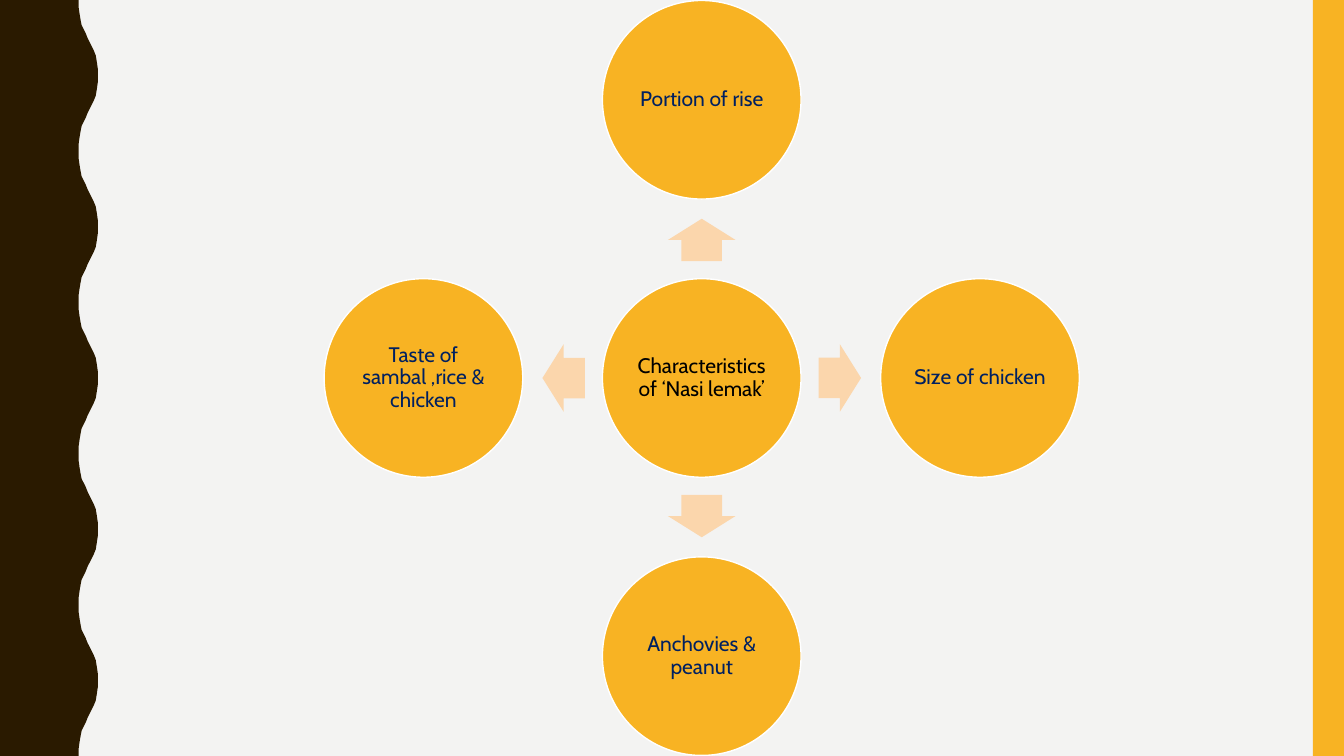
"""Build a radial diagram slide of the characteristics of nasi lemak."""
from pptx import Presentation
from pptx.dml.color import RGBColor
from pptx.enum.shapes import MSO_SHAPE
from pptx.enum.text import MSO_ANCHOR, PP_ALIGN
from pptx.util import Inches, Pt

HUB_TEXT = "Characteristics of ‘Nasi lemak’"
BRANCHES = [
    ("Portion of rise", 0, -1, 270),
    ("Size of chicken", 1, 0, 0),
    ("Anchovies & peanut", 0, 1, 90),
    ("Taste of sambal ,rice & chicken", -1, 0, 180),
]
HALF_WAVE = [
    (0.78, 0), (0.78, 0.07), (0.79, 0.14), (0.8, 0.2), (0.81, 0.25),
    (0.83, 0.29), (0.85, 0.33), (0.87, 0.38), (0.89, 0.42), (0.91, 0.46),
    (0.93, 0.5), (0.95, 0.55), (0.96, 0.61), (0.97, 0.68), (0.97, 0.75),
]

FONT = "Cabin"
BACKGROUND = RGBColor(0xF3, 0xF3, 0xF2)
BROWN = RGBColor(0x2A, 0x1A, 0x00)
AMBER = RGBColor(0xF8, 0xB3, 0x23)
PEACH = RGBColor(0xFB, 0xD6, 0xAC)
NAVY = RGBColor(0x00, 0x20, 0x60)
BLACK = RGBColor(0x00, 0x00, 0x00)
WHITE = RGBColor(0xFF, 0xFF, 0xFF)

OVAL, ARROW, RECTANGLE = MSO_SHAPE.OVAL, MSO_SHAPE.RIGHT_ARROW, MSO_SHAPE.RECTANGLE
MIDDLE, CENTER = MSO_ANCHOR.MIDDLE, PP_ALIGN.CENTER

SLIDE_WIDTH, SLIDE_HEIGHT = 13.33, 7.5
BAR_WIDTH = 0.31
WAVE_PERIOD, WAVE_COUNT = 1.5, 5
CENTER_X, CENTER_Y = 6.96, 3.75
DIAMETER = 1.97
CIRCLE_STEP, ARROW_STEP = 2.76, 1.37
ARROW_LENGTH, ARROW_BREADTH = 0.42, 0.67
INSET = 0.02


def paint(shape, color):
    shape.shadow.inherit = False
    shape.fill.solid()
    shape.fill.fore_color.rgb = color
    shape.line.fill.background()


def add_centered(slide, kind, x, y, width, height, color):
    shape = slide.shapes.add_shape(
        kind, Inches(x - width / 2), Inches(y - height / 2), Inches(width), Inches(height))
    paint(shape, color)
    return shape


def add_circle(slide, text, x, y, text_color):
    circle = add_centered(slide, OVAL, x, y, DIAMETER, DIAMETER, AMBER)
    circle.line.color.rgb = WHITE
    circle.line.width = Pt(1)
    frame = circle.text_frame
    frame.word_wrap = True
    frame.vertical_anchor = MIDDLE
    frame.margin_left = frame.margin_right = Inches(INSET)
    frame.margin_top = frame.margin_bottom = Inches(INSET)
    paragraph = frame.paragraphs[0]
    paragraph.text = text
    paragraph.alignment = CENTER
    paragraph.line_spacing = 0.9
    paragraph.font.name = FONT
    paragraph.font.size = Pt(15)
    paragraph.font.color.rgb = text_color


def add_wavy_edge(slide):
    period = HALF_WAVE + [(x, WAVE_PERIOD - y) for x, y in HALF_WAVE[-2::-1]]
    edge = [(x, y + i * WAVE_PERIOD) for i in range(WAVE_COUNT) for x, y in period]
    outline = edge + [(0, SLIDE_HEIGHT)]
    builder = slide.shapes.build_freeform(0, 0)
    builder.add_line_segments([(Inches(x), Inches(y)) for x, y in outline], close=True)
    paint(builder.convert_to_shape(), BROWN)


def main():
    presentation = Presentation()
    presentation.slide_width = Inches(SLIDE_WIDTH)
    presentation.slide_height = Inches(SLIDE_HEIGHT)
    slide = presentation.slides.add_slide(presentation.slide_layouts[6])
    slide.background.fill.solid()
    slide.background.fill.fore_color.rgb = BACKGROUND

    add_wavy_edge(slide)
    add_centered(slide, RECTANGLE, SLIDE_WIDTH - BAR_WIDTH / 2, SLIDE_HEIGHT / 2,
                 BAR_WIDTH, SLIDE_HEIGHT, AMBER)

    add_circle(slide, HUB_TEXT, CENTER_X, CENTER_Y, BLACK)
    for text, across, down, angle in BRANCHES:
        arrow = add_centered(slide, ARROW, CENTER_X + across * ARROW_STEP,
                             CENTER_Y + down * ARROW_STEP,
                             ARROW_LENGTH, ARROW_BREADTH, PEACH)
        arrow.adjustments[0] = 0.6
        arrow.adjustments[1] = 0.5
        arrow.rotation = angle
        add_circle(slide, text, CENTER_X + across * CIRCLE_STEP,
                   CENTER_Y + down * CIRCLE_STEP, NAVY)

    presentation.save("out.pptx")


if __name__ == "__main__":
    main()
